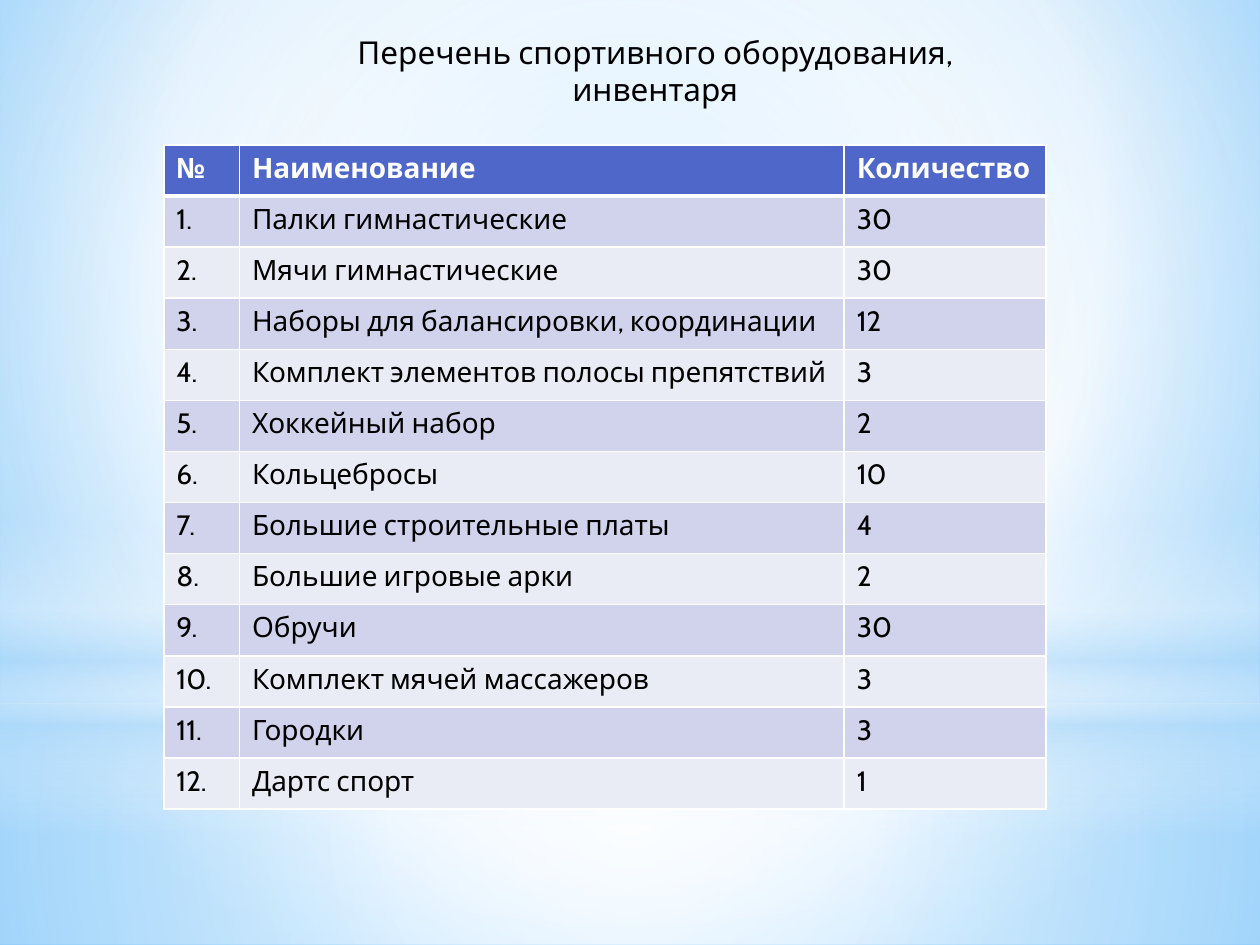
from lxml.etree import SubElement
from pptx import Presentation
from pptx.dml.color import RGBColor
from pptx.enum.shapes import MSO_SHAPE
from pptx.enum.text import PP_ALIGN
from pptx.oxml import parse_xml
from pptx.oxml.ns import nsdecls, qn
from pptx.util import Pt

COLORS = {
    "white": "FFFFFF", "black": "000000", "haze": "B4DCFA",
    "sky": "9ED5FF", "deep": "5BB9FF",
    "header": "4E67C8", "odd": "D0D3EB", "even": "E9EBF5",
}


def set_text(tf, text, size=16, color="black", bold=False, align=PP_ALIGN.LEFT):
    p = tf.paragraphs[0]
    p.alignment = align
    r = p.add_run()
    r.text = text
    r.font.name = "Cabin"
    r.font.size = Pt(size)
    r.font.bold = bold
    r.font.color.rgb = RGBColor.from_string(COLORS[color])


def set_gradient(fill, element, stops, center=None):
    """Stops are (position %, colour, opacity %); without a center it runs downwards."""
    fill.solid()
    solid = element.find(".//" + qn("a:solidFill"))
    grad = parse_xml(f'<a:gradFill rotWithShape="1" {nsdecls("a")}><a:gsLst/></a:gradFill>')
    for pos, color, opacity in stops:
        gs = SubElement(grad[0], qn("a:gs"), pos=str(pos * 1000))
        clr = SubElement(gs, qn("a:srgbClr"), val=COLORS[color])
        SubElement(clr, qn("a:alpha"), val=str(opacity * 1000))
    if center:
        path = SubElement(grad, qn("a:path"), path="circle")
        sides = {side: str(v * 1000) for side, v in zip("ltrb", center)}
        SubElement(path, qn("a:fillToRect"), **sides)
    else:
        SubElement(grad, qn("a:lin"), ang="5400000", scaled="0")
    solid.getparent().replace(solid, grad)


prs = Presentation()
prs.slide_width, prs.slide_height = Pt(720), Pt(540)
s = prs.slides.add_slide(prs.slide_layouts[6])

# Background
set_gradient(s.background.fill, s._element,
             [(0, "sky", 100), (60, "white", 100), (100, "deep", 100)], (20, 10, 20, 60))

# Layers of light: shape, top, height, stops, center
middle = (50, 50, 50, 50)
layers = [
    (MSO_SHAPE.RECTANGLE, 401.8, 138.2,
     [(0, "white", 91), (37, "white", 76), (100, "haze", 79)], middle),
    (MSO_SHAPE.RECTANGLE, 0, 401.8,
     [(0, "white", 89), (48, "white", 62), (100, "haze", 79)], middle),
    (MSO_SHAPE.RECTANGLE, 296.6, 180,
     [(0, "white", 0), (29, "white", 30), (45, "haze", 40),
      (55, "white", 26), (65, "haze", 60), (100, "white", 0)], None),
    (MSO_SHAPE.OVAL, 126, 401.8, [(0, "white", 100), (56, "white", 0)], middle),
]
for kind, top, height, stops, center in layers:
    sp = s.shapes.add_shape(kind, 0, Pt(top), prs.slide_width, Pt(height))
    sp.shadow.inherit = False
    sp.line.fill.background()
    set_gradient(sp.fill, sp._element, stops, center)

# Equipment table
items = [
    ("Палки гимнастические", 30),
    ("Мячи гимнастические", 30),
    ("Наборы для балансировки, координации", 12),
    ("Комплект элементов полосы препятствий", 3),
    ("Хоккейный набор", 2),
    ("Кольцебросы", 10),
    ("Большие строительные платы", 4),
    ("Большие игровые арки", 2),
    ("Обручи", 30),
    ("Комплект мячей массажеров", 3),
    ("Городки", 3),
    ("Дартс спорт", 1),
]
rows = [("№", "Наименование", "Количество")]
rows += [(f"{n}.", name, str(count)) for n, (name, count) in enumerate(items, 1)]
row_height = 29.2
table = s.shapes.add_table(len(rows), 3, Pt(93.6), Pt(82.8),
                           Pt(504), Pt(row_height * len(rows))).table
for column, width in zip(table.columns, (43.2, 345.6, 115.2)):
    column.width = Pt(width)
for i, row in enumerate(rows):
    table.rows[i].height = Pt(row_height)
    fill = "header" if i == 0 else "odd" if i % 2 else "even"
    for j, text in enumerate(row):
        cell = table.cell(i, j)
        set_text(cell.text_frame, text, color="black" if i else "white", bold=i == 0)
        cell.fill.solid()
        cell.fill.fore_color.rgb = RGBColor.from_string(COLORS[fill])
        # White borders, with a thick rule under the header
        for k, side in enumerate("LRTB"):
            weight = 3 if (i, side) in ((0, "B"), (1, "T")) else 1
            cell._tc.get_or_add_tcPr().insert(k, parse_xml(
                f'<a:ln{side} w="{Pt(weight)}" {nsdecls("a")}><a:solidFill>'
                f'<a:srgbClr val="{COLORS["white"]}"/></a:solidFill></a:ln{side}>'))

# Title
tf = s.shapes.add_textbox(Pt(184.3), Pt(15.1), Pt(380.2), Pt(51.1)).text_frame
tf.word_wrap = True
set_text(tf, "Перечень спортивного оборудования, инвентаря", size=18, align=PP_ALIGN.CENTER)

prs.save("out.pptx")
